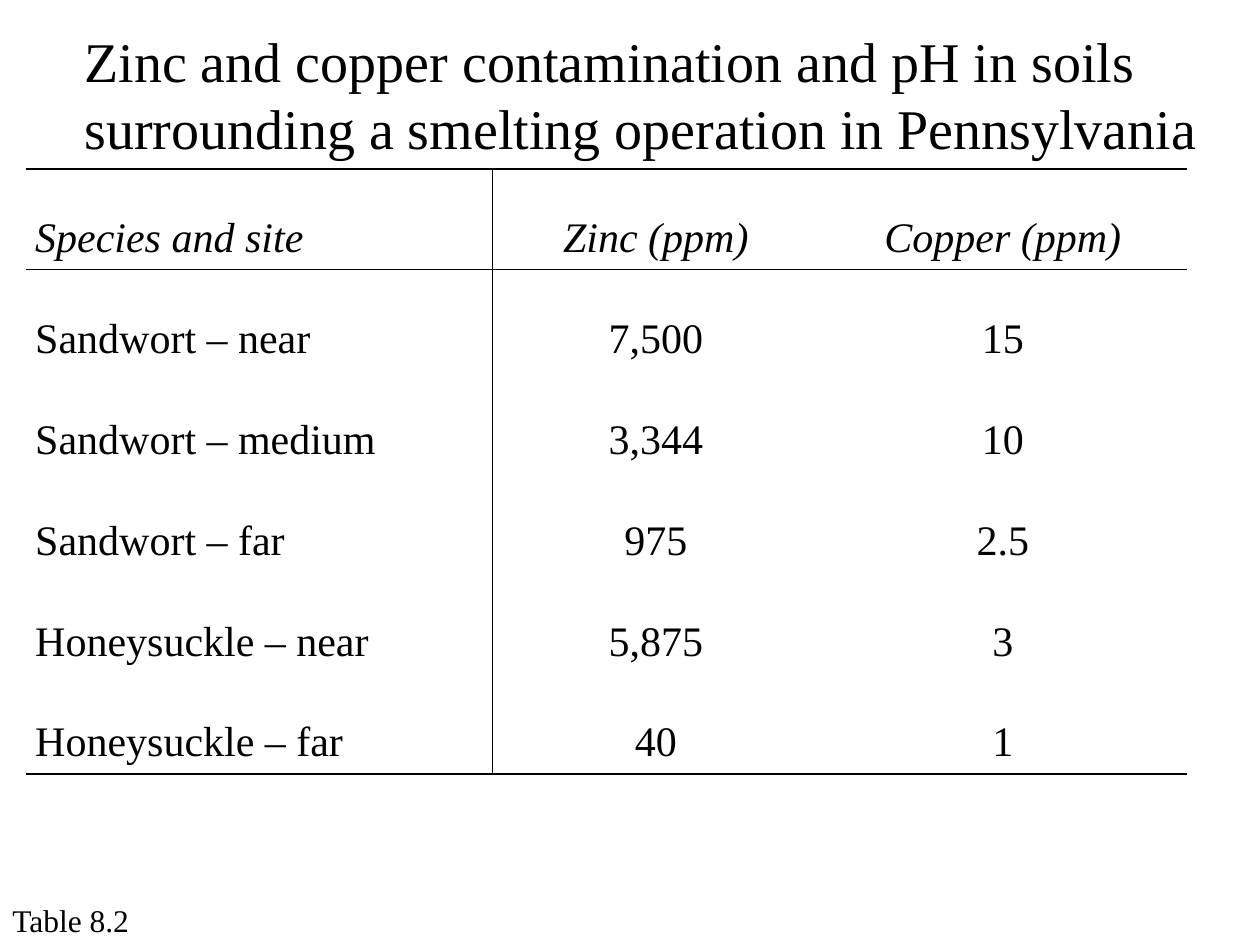
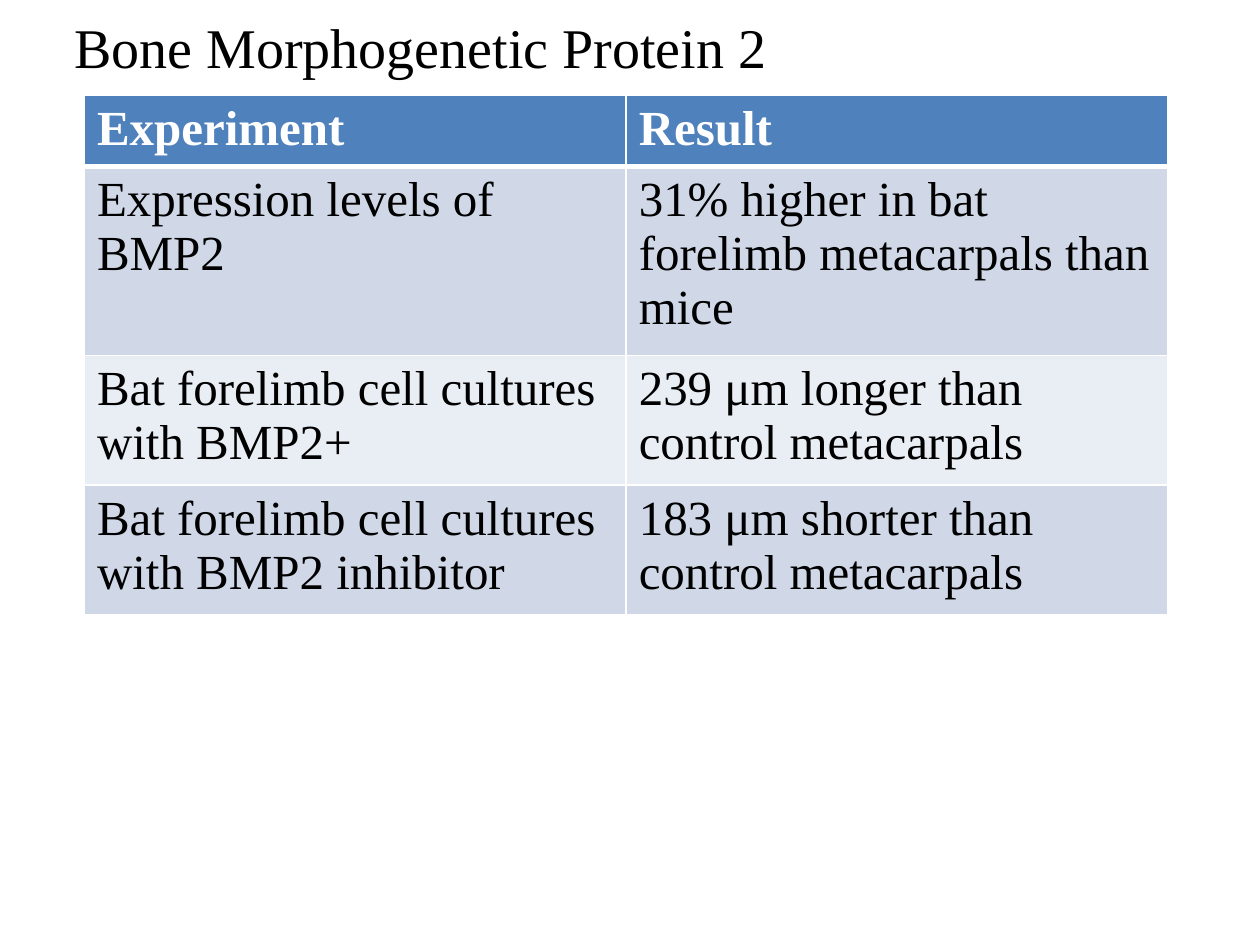
from dataclasses import dataclass

from lxml import etree
from pptx import Presentation
from pptx.dml.color import RGBColor
from pptx.enum.text import MSO_ANCHOR, MSO_AUTO_SIZE, PP_ALIGN
from pptx.oxml.ns import qn
from pptx.util import Inches, Pt

LEFT, CENTER = PP_ALIGN.LEFT, PP_ALIGN.CENTER
TOP = MSO_ANCHOR.TOP
NO_FIT = MSO_AUTO_SIZE.NONE
TITLE_ONLY = 5
SIDES = ("L", "R", "T", "B")


@dataclass(frozen=True)
class Theme:
    font: str = "Times New Roman"
    ink: str = "000000"
    paper: str = "FFFFFF"
    header: str = "4F81BD"
    band_dark: str = "D0D8E8"
    band_light: str = "E9EDF4"
    title_size: int = 32
    data_size: int = 24
    finding_size: int = 28
    caption_size: int = 18


THEME = Theme()

SOIL_ROWS = [
    ("Species and site", "Zinc (ppm)", "Copper (ppm)"),
    ("Sandwort – near", "7,500", "15"),
    ("Sandwort – medium", "3,344", "10"),
    ("Sandwort – far", "975", "2.5"),
    ("Honeysuckle – near", "5,875", "3"),
    ("Honeysuckle – far", "40", "1"),
]
BMP_ROWS = [
    ("Experiment", "Result"),
    ("Expression levels of BMP2", "31% higher in bat forelimb metacarpals than mice"),
    ("Bat forelimb cell cultures with BMP2+", "239 μm longer than control metacarpals"),
    ("Bat forelimb cell cultures with BMP2 inhibitor", "183 μm shorter than control metacarpals"),
]


def write(frame, text, size, color=THEME.ink, bold=False, italic=False, align=LEFT):
    frame.text = text
    para = frame.paragraphs[0]
    para.alignment = align
    for span in para.runs:
        span.font.name = THEME.font
        span.font.size = Pt(size)
        span.font.bold = bold
        span.font.italic = italic
        span.font.color.rgb = RGBColor.from_string(color)
    return para


def add_page(deck, title, left, top, width, height):
    page = deck.slides.add_slide(deck.slide_layouts[TITLE_ONLY])
    box = page.shapes.title
    box.left, box.top = Inches(left), Inches(top)
    box.width, box.height = Inches(width), Inches(height)
    frame = box.text_frame
    frame.auto_size = NO_FIT
    frame.word_wrap = True
    frame.vertical_anchor = TOP
    write(frame, title, THEME.title_size)
    return page


def add_caption(page, text, left, top, width, height):
    box = page.shapes.add_textbox(Inches(left), Inches(top), Inches(width), Inches(height))
    box.text_frame.word_wrap = False
    write(box.text_frame, text, THEME.caption_size)


def add_grid(page, left, top, column_widths, row_heights):
    """Add a table without the emphasis of its built-in style."""
    table = page.shapes.add_table(
        len(row_heights), len(column_widths), Inches(left), Inches(top),
        Inches(sum(column_widths)), Inches(sum(row_heights))).table
    table.first_row = table.horz_banding = False
    for column, width in zip(table.columns, column_widths):
        column.width = Inches(width)
    for row, height in zip(table.rows, row_heights):
        row.height = Inches(height)
    return table


def set_borders(cell, color, widths):
    """Draw the sides named in widths (points) and clear the others."""
    properties = cell._tc.get_or_add_tcPr()
    for index, side in enumerate(SIDES):
        line = etree.Element(qn(f"a:ln{side}"))
        if side in widths:
            line.set("w", str(Pt(widths[side])))
            fill = etree.SubElement(line, qn("a:solidFill"))
            etree.SubElement(fill, qn("a:srgbClr"), val=color)
        else:
            etree.SubElement(line, qn("a:noFill"))
        properties.insert(index, line)


def soil_borders(row, column):
    widths = {}
    if row == 0:
        widths.update(T=1.5, B=1)
    elif row == 1:
        widths["T"] = 1
    elif row == len(SOIL_ROWS) - 1:
        widths["B"] = 1.5
    if column == 0:
        widths["R"] = 1
    elif column == 1:
        widths["L"] = 1
    return widths


def add_soil_table(page):
    table = add_grid(page, 0.21, 1.34, (3.7, 2.59, 2.92), [0.8] * len(SOIL_ROWS))
    for row, values in enumerate(SOIL_ROWS):
        for column, value in enumerate(values):
            cell = table.cell(row, column)
            cell.margin_left = cell.margin_right = Inches(0.07)
            cell.margin_top = cell.margin_bottom = 0
            cell.fill.background()
            para = write(cell.text_frame, value, THEME.data_size, italic=row == 0,
                         align=CENTER if column else LEFT)
            para.line_spacing = 2.0
            set_borders(cell, THEME.ink, soil_borders(row, column))


def add_bmp_table(page):
    table = add_grid(page, 0.67, 0.76, (4.3, 4.3), (0.56, 1.5, 1.03, 1.03))
    table.first_row = True
    for row, values in enumerate(BMP_ROWS):
        is_header = row == 0
        band = THEME.band_dark if row % 2 else THEME.band_light
        widths = dict.fromkeys(SIDES, 1)
        if is_header:
            widths["B"] = 3
        elif row == 1:
            widths["T"] = 3
        for column, value in enumerate(values):
            cell = table.cell(row, column)
            cell.fill.solid()
            cell.fill.fore_color.rgb = RGBColor.from_string(THEME.header if is_header else band)
            write(cell.text_frame, value, THEME.finding_size,
                  color=THEME.paper if is_header else THEME.ink, bold=is_header)
            set_borders(cell, THEME.paper, widths)


def main():
    deck = Presentation()
    deck.slide_width, deck.slide_height = Inches(10), Inches(7.5)

    soil_page = add_page(
        deck, "Zinc and copper contamination and pH in soils surrounding a smelting "
        "operation in Pennsylvania", 0.57, 0.16, 9.43, 1.18)
    add_caption(soil_page, "Table 8.2", 0, 7.1, 1.14, 0.4)
    add_soil_table(soil_page)

    bmp_page = add_page(deck, "Bone Morphogenetic Protein 2", 0.49, 0.05, 9.51, 0.64)
    add_bmp_table(bmp_page)

    deck.save("out.pptx")


if __name__ == "__main__":
    main()
